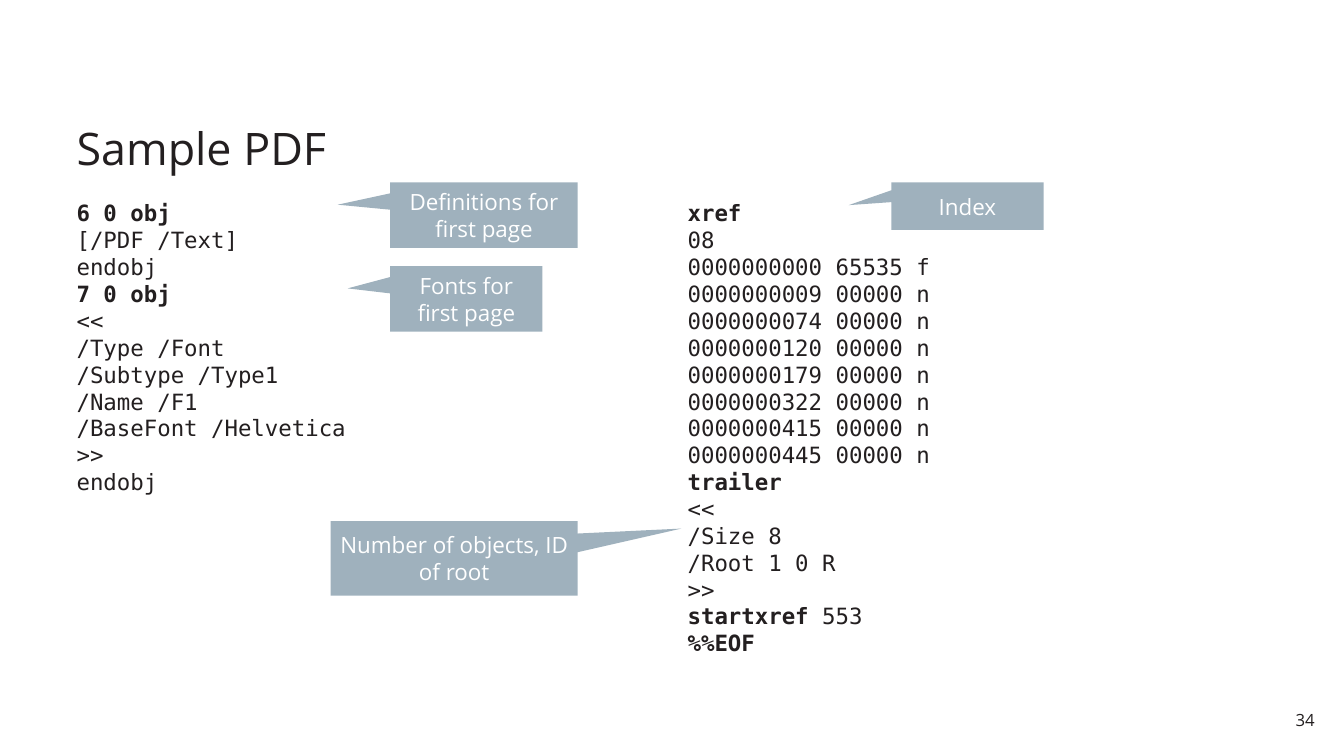
from pptx import Presentation
from pptx.dml.color import RGBColor
from pptx.enum.shapes import MSO_SHAPE
from pptx.enum.text import MSO_ANCHOR, PP_ALIGN
from pptx.util import Inches, Pt

COLORS = {"ink": "231F20", "callout": "9FB1BD", "white": "FFFFFF"}
SANS, MONO = "Open Sans", "DejaVu Sans Mono"
LINE_PITCH = Pt(19.2)

TITLE = "Sample PDF"
PAGE_NUMBER = "34"

# Each line of code is (bold part, plain part).
OBJECTS = [
    ("6 0 obj", ""),
    ("", "[/PDF /Text]"),
    ("", "endobj"),
    ("7 0 obj", ""),
    ("", "<<"),
    ("", "/Type /Font"),
    ("", "/Subtype /Type1"),
    ("", "/Name /F1"),
    ("", "/BaseFont /Helvetica"),
    ("", ">>"),
    ("", "endobj"),
]
XREF = [
    ("xref", ""),
    ("", "08"),
    ("", "0000000000 65535 f"),
    ("", "0000000009 00000 n"),
    ("", "0000000074 00000 n"),
    ("", "0000000120 00000 n"),
    ("", "0000000179 00000 n"),
    ("", "0000000322 00000 n"),
    ("", "0000000415 00000 n"),
    ("", "0000000445 00000 n"),
    ("trailer", ""),
    ("", "<<"),
    ("", "/Size 8"),
    ("", "/Root 1 0 R"),
    ("", ">>"),
    ("startxref", " 553"),
    ("%%EOF", ""),
]
CODE_COLUMNS = [(0.68, OBJECTS), (6.74, XREF)]

# text, (left, top, width, height), pointer tip relative to the centre
CALLOUTS = [
    ("Index", (8.84, 1.81, 1.51, 0.47), (-0.78, -0.02)),
    ("Fonts for first page", (3.87, 2.64, 1.51, 0.65), (-0.78, -0.16)),
    ("Definitions for first page", (3.87, 1.81, 1.86, 0.65), (-0.78, -0.16)),
    ("Number of objects, ID of root", (3.28, 5.17, 2.45, 0.74), (0.92, -0.4)),
]


def set_frame(shape, vertical_inset, anchor=MSO_ANCHOR.TOP):
    """Wrap the shape's text, set its insets and return its first paragraph."""
    frame = shape.text_frame
    frame.word_wrap = True
    frame.vertical_anchor = anchor
    frame.margin_left = frame.margin_right = Inches(0.08)
    frame.margin_top = frame.margin_bottom = Inches(vertical_inset)
    return frame.paragraphs[0]


def set_font(paragraph, size, color="ink", name=SANS):
    paragraph.font.size = Pt(size)
    paragraph.font.name = name
    paragraph.font.color.rgb = RGBColor.from_string(COLORS[color])


def add_text_box(slide, box, vertical_inset, anchor=MSO_ANCHOR.TOP):
    shape = slide.shapes.add_textbox(*map(Inches, box))
    return set_frame(shape, vertical_inset, anchor)


def add_code(slide, left, lines):
    paragraph = add_text_box(slide, (left, 1.94, 5.91, 4.88), 0.04)
    paragraph.line_spacing = LINE_PITCH
    set_font(paragraph, 16, name=MONO)
    for index, parts in enumerate(lines):
        if index:
            paragraph.add_line_break()
        for text, bold in zip(parts, (True, False)):
            if text:
                run = paragraph.add_run()
                run.text = text
                run.font.bold = bold


def add_callout(slide, text, box, tip):
    shape = slide.shapes.add_shape(
        MSO_SHAPE.RECTANGULAR_CALLOUT, *map(Inches, box))
    shape.adjustments[0], shape.adjustments[1] = tip
    shape.shadow.inherit = False
    shape.fill.solid()
    shape.fill.fore_color.rgb = RGBColor.from_string(COLORS["callout"])
    shape.line.fill.background()
    paragraph = set_frame(shape, 0.08, MSO_ANCHOR.MIDDLE)
    paragraph.text = text
    paragraph.alignment = PP_ALIGN.CENTER
    paragraph.line_spacing = LINE_PITCH
    set_font(paragraph, 16, "white")


def main():
    presentation = Presentation()
    presentation.slide_width = Inches(13.33)
    presentation.slide_height = Inches(7.5)
    slide = presentation.slides.add_slide(presentation.slide_layouts[6])

    number = add_text_box(slide, (12.65, 6.98, 0.47, 0.31), 0.06)
    number.text = PAGE_NUMBER
    number.alignment = PP_ALIGN.RIGHT
    set_font(number, 12)

    title = add_text_box(slide, (0.68, 0.76, 11.97, 1.02), 0.04, MSO_ANCHOR.BOTTOM)
    title.text = TITLE
    title.line_spacing = 0.9
    set_font(title, 32)

    for left, lines in CODE_COLUMNS:
        add_code(slide, left, lines)
    for text, box, tip in CALLOUTS:
        add_callout(slide, text, box, tip)

    presentation.save("out.pptx")


if __name__ == "__main__":
    main()
